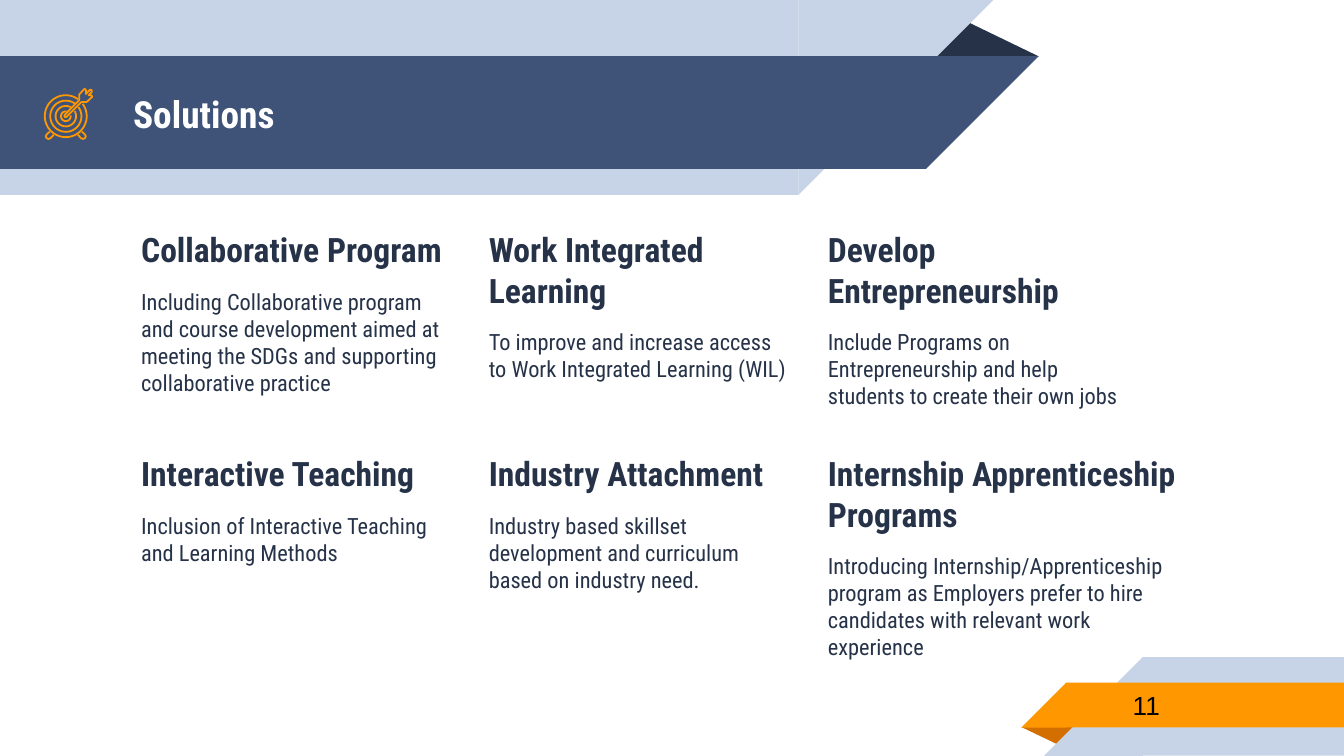
import copy
import math
import pptx
import pptx.dml.color
import pptx.enum.shapes
import pptx.enum.text
import pptx.oxml
import pptx.util

COLORS = {
    "navy": "263248",
    "blue": "3F5378",
    "pale": "C7D3E6",
    "orange": "FF9800",
    "rust": "D26F00",
    "white": "FFFFFF",
    "black": "000000",
}
rgb = pptx.dml.color.RGBColor.from_string
kinds = pptx.enum.shapes.MSO_SHAPE
anchors = pptx.enum.text.MSO_ANCHOR

deck = pptx.Presentation()
deck.slide_width = pptx.util.Inches(10)
deck.slide_height = deck.slide_width * 9 // 16
cell = deck.slide_width / 100
page = deck.slides.add_slide(deck.slide_layouts[1])
tree = page.shapes.element


def frame_box(box, bounds, anchor):
    box.left, box.top, box.width, box.height = [round(n * cell) for n in bounds]
    frame = box.text_frame
    frame.word_wrap = True
    frame.auto_size = pptx.enum.text.MSO_AUTO_SIZE.NONE
    frame.vertical_anchor = anchor
    frame.margin_left = frame.margin_right = round(cell)
    frame.margin_top = frame.margin_bottom = round(cell)
    return frame


def write(para, text, size=12, color="navy", font="Roboto Condensed", bold=False, after=0):
    span = para.add_run()
    span.text = text
    span.font.size = pptx.util.Pt(size)
    span.font.name = font
    span.font.bold = bold
    span.font.color.rgb = rgb(COLORS[color])
    para.alignment = pptx.enum.text.PP_ALIGN.LEFT
    para.space_before = pptx.util.Pt(0)
    para.space_after = pptx.util.Pt(after)


bands = [
    (kinds.ISOSCELES_TRIANGLE, "navy", (68.8, 1.4, 8.5, 2.8), 0, False),
    (kinds.RECTANGLE, "pale", (0, 0, 59.4, 14.5), 180, True),
    (kinds.RIGHT_TRIANGLE, "pale", (59.4, 0, 14.5, 14.5), 180, True),
    (kinds.RECTANGLE, "blue", (0, 4.17, 68.9, 8.4), 180, True),
    (kinds.RIGHT_TRIANGLE, "blue", (68.9, 4.17, 8.4, 8.4), 180, True),
    (kinds.ISOSCELES_TRIANGLE, "rust", (76, 54.1, 4.3, 1.4), 180, False),
    (kinds.RECTANGLE, "pale", (85, 48.9, 15, 7.34), 0, True),
    (kinds.RIGHT_TRIANGLE, "pale", (77.7, 48.9, 7.34, 7.34), 0, True),
    (kinds.RECTANGLE, "orange", (79.3, 50.8, 20.7, 3.34), 0, True),
    (kinds.RIGHT_TRIANGLE, "orange", (76, 50.8, 3.34, 3.34), 0, True),
]
for kind, color, bounds, turn, flipped in bands:
    band = page.shapes.add_shape(kind, *[round(n * cell) for n in bounds])
    band.shadow.inherit = False
    band.fill.solid()
    band.fill.fore_color.rgb = rgb(COLORS[color])
    band.line.fill.background()
    band.rotation = turn
    if flipped:
        band.element.spPr.xfrm.set("flipH", "1")
    if kind == kinds.ISOSCELES_TRIANGLE:
        band.adjustments[0] = 0.32

title = page.shapes.title
body = page.placeholders[1]
tree.append(title.element)
frame = frame_box(title, (8.9, 4.25, 57.5, 8.4), anchors.MIDDLE)
write(frame.paragraphs[0], "Solutions", size=20, color="white", bold=True)

blank_body = copy.deepcopy(body.element)
tree.remove(body.element)
lefts = [9.5, 35.37, 60.6]
tops = [16.05, 32.72]
solutions = [
    ("Collaborative Program", "Including Collaborative program and course development aimed at meeting the SDGs and supporting collaborative practice"),
    ("Work Integrated Learning", "To improve and increase access to Work Integrated Learning (WIL)"),
    ("Develop Entrepreneurship", "Include Programs on Entrepreneurship and help students to create their own jobs"),
    ("Interactive Teaching", "Inclusion of Interactive Teaching and Learning Methods"),
    ("Industry Attachment", "Industry based skillset development and curriculum based on industry need."),
    ("Internship Apprenticeship Programs", "Introducing Internship/Apprenticeship program as Employers prefer to hire candidates with relevant work experience"),
]
for index, (heading, detail) in enumerate(solutions):
    row, column = divmod(index, len(lefts))
    tree.append(copy.deepcopy(blank_body))
    box = page.shapes[-1]
    box.element.nvSpPr.cNvPr.set("id", str(100 + index))
    box.name = f"Solution {index + 1}"
    width = 28.6 if index == len(solutions) - 1 else 24.6
    frame = frame_box(box, (lefts[column], tops[row], width, 16.6), anchors.TOP)
    write(frame.paragraphs[0], heading, size=18, bold=True, after=10)
    write(frame.add_paragraph(), detail, after=10)
    for para in frame.paragraphs:
        layout = para._p.get_or_add_pPr()
        layout.set("marL", "0")
        layout.set("indent", "0")
        layout.insert_element_before(
            pptx.oxml.parse_xml('<a:buNone xmlns:a="http://schemas.openxmlformats.org/drawingml/2006/main"/>'),
            "a:tabLst", "a:defRPr", "a:extLst")

number = page.shapes.add_textbox(0, 0, 0, 0)
frame = frame_box(number, (83.3, 50.7, 16.3, 3.5), anchors.MIDDLE)
write(frame.paragraphs[0], "11", size=14, color="black", font="Arial")

center_x, center_y = 4.9, 8.65
outlines = []
for radius, gap in [(1.56, 9), (1.16, 9), (0.76, 16), (0.36, 36)]:
    angles = [math.radians(45 + gap + (360 - 2 * gap) * step / 60) for step in range(61)]
    outlines.append(([(center_x + radius * math.cos(a), center_y - radius * math.sin(a)) for a in angles], False))
foot = [(3.7, 9.8), (3.48, 10), (3.4, 10.15), (3.46, 10.27), (3.6, 10.34), (3.75, 10.3), (4, 10.03)]
outlines.append((foot, False))
outlines.append(([(2 * center_x - x, y) for x, y in foot], False))
arrow = [
    (6.8, 7.1), (6.6, 7.1), (6.83, 6.85), (6.83, 6.7), (6.7, 6.68), (6.4, 7), (6.4, 6.7), (6.3, 6.6),
    (5.9, 7.03), (5.9, 7.45), (4.8, 8.57), (4.8, 8.7), (4.95, 8.7), (6.05, 7.6), (6.45, 7.6), (6.87, 7.2),
]
outlines.append((arrow, True))
for points, closed in outlines:
    corners = [(round(x * cell), round(y * cell)) for x, y in points]
    builder = page.shapes.build_freeform(*corners[0])
    builder.add_line_segments(corners[1:], close=closed)
    stroke = builder.convert_to_shape()
    stroke.shadow.inherit = False
    stroke.fill.background()
    stroke.line.color.rgb = rgb(COLORS["orange"])
    stroke.line.width = pptx.util.Pt(0.96)

deck.save("out.pptx")
